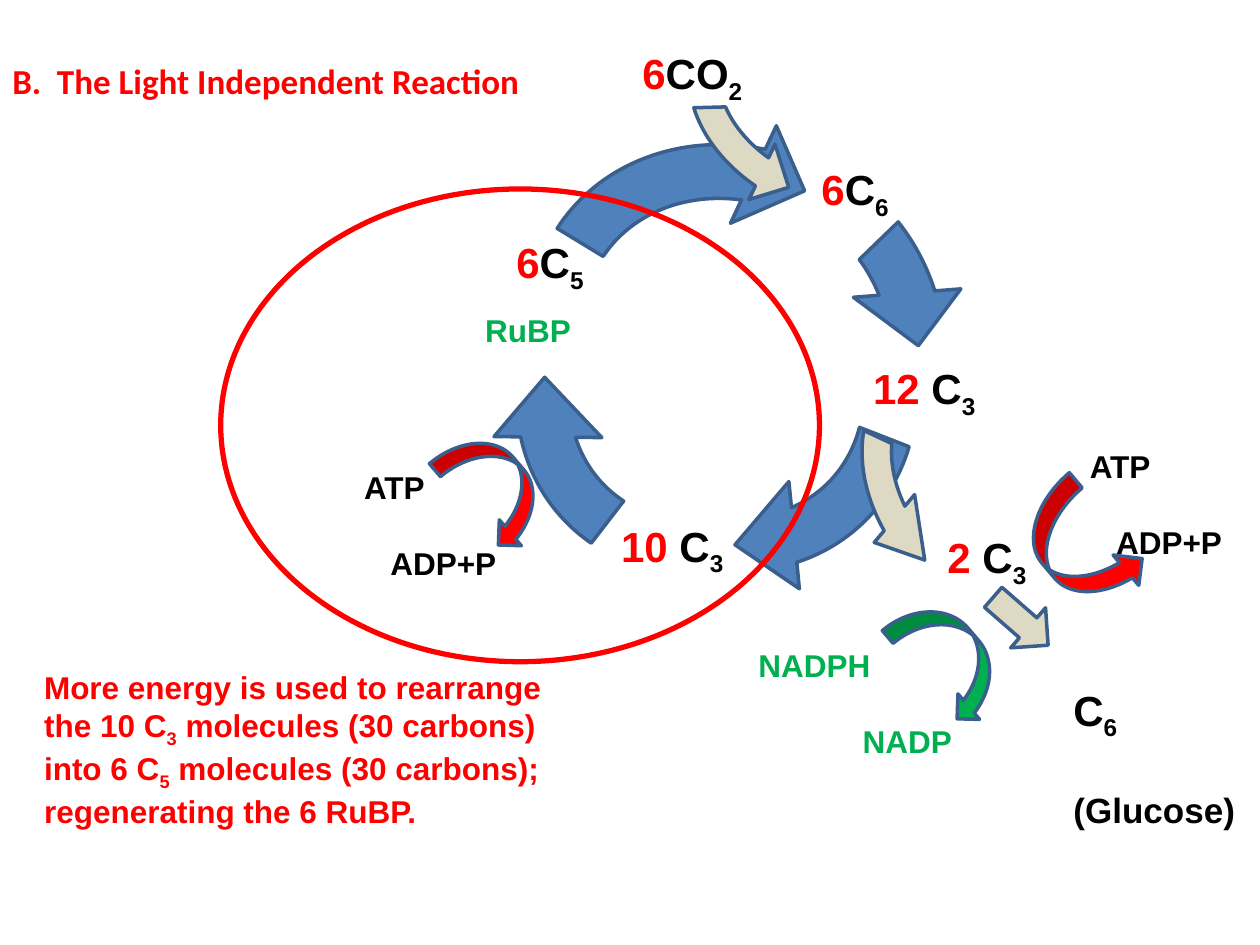
import pptx
import pptx.dml.color
import pptx.enum.shapes
import pptx.util

Cm = pptx.util.Cm
Kind = pptx.enum.shapes.MSO_SHAPE

THEME = {
    "red": "FF0000", "black": "000000", "green": "00B050",
    "blue": "4F81BD", "beige": "DDD9C3", "outline": "3A5F8C",
    "font": "Arial", "title_font": "Calibri",
    "formula": 24, "title": 20, "glucose": 20, "body": 18,
    "arrow_line": 2, "ring_line": 3,
}
SLIDE_W, SLIDE_H = 25.4, 19.05
LABEL_W = 4

TITLE = [("B.\tThe Light Independent Reaction", "red", False)]
ENERGY_NOTE = [
    ("More energy is used to rearrange the 10 C", "red", False),
    ("3", "red", True),
    (" molecules (30 carbons) into 6 C", "red", False),
    ("5", "red", True),
    (" molecules (30 carbons); regenerating the 6 RuBP.", "red", False),
]

# count, molecule, subscript, left, top
FORMULAS = [
    ("6", "CO", "2", 12.7, 0.84),
    ("6", "C", "6", 16.31, 3.18),
    ("12", " C", "3", 17.35, 7.19),
    ("2", " C", "3", 18.85, 10.59),
    ("", "C", "6", 21.39, 13.67),
    ("10", " C", "3", 12.27, 10.36),
    ("6", "C", "5", 10.16, 4.65),
]
# carrier, spent carrier, colour, left, top, shift of the spent carrier
CARRIERS = [
    ("ATP", "ADP+P", "black", 7.09, 9.32, 0.53),
    ("ATP", "ADP+P", "black", 21.72, 8.89, 0.53),
    ("NADPH", "NADP", "green", 15.04, 12.9, 2.1),
]
CARRIER_DROP = 1.53
# text, colour, size, left, top
NAMES = [
    ("RuBP", "green", "body", 9.53, 6.15),
    ("(Glucose)", "black", "glucose", 21.39, 15.77),
]

# left, top, rotation, adjustments
CYCLE_SIZE = (8.69, 9.53)
CYCLE_ARROWS = [
    (10.92, 2.46, 355.5, (0.125, 11.423, 204.577, 192.255, 0.125)),
    (10.13, 2.74, 135.6, (0.123, 11.663, 173.624, 147.42, 0.125)),
    (10.49, 2.03, 295.2, (0.125, 11.423, 204.577, 165.667, 0.125)),
    (10.13, 2.87, 231.7, (0.123, 11.663, 173.624, 153.572, 0.125)),
]
# kind, box, fill, rotation, mirrored, adjustments
SIDE_ARROWS = [
    (Kind.CIRCULAR_ARROW, (14.22, -1.12, 4.93, 6.45), "beige", 295.2, True,
     (0.125, 11.423, 204.577, 177.986, 0.125)),
    (Kind.CIRCULAR_ARROW, (17.35, 6.58, 5.05, 6.5), "beige", 321.7, True,
     (0.119, 18.727, 204.204, 177.986, 0.125)),
    (Kind.RIGHT_ARROW, (19.84, 11.99, 1.47, 1.07), "beige", 41.1, False, ()),
    (Kind.CURVED_RIGHT_ARROW, (21.01, 9.73, 1.6, 2.67), "red", 319.7, False, ()),
    (Kind.CURVED_RIGHT_ARROW, (18.49, 11.96, 1.35, 2.67), "green", 319.7, True, ()),
    (Kind.CURVED_RIGHT_ARROW, (9.3, 8.61, 1.37, 2.49), "red", 319.7, True, ()),
]
RING = (4.45, 3.81, 12.07, 9.53)


def rgb(colour):
    return pptx.dml.color.RGBColor.from_string(THEME[colour])


def add_outlined(slide, kind, box, line_colour, line_width):
    shape = slide.shapes.add_shape(kind, *map(Cm, box))
    shape.shadow.inherit = False
    shape.fill.background()
    shape.line.color.rgb = rgb(line_colour)
    shape.line.width = pptx.util.Pt(THEME[line_width])
    return shape


def add_arrow(slide, kind, box, fill, rotation, mirrored, adjustments):
    arrow = add_outlined(slide, kind, box, "outline", "arrow_line")
    arrow.fill.solid()
    arrow.fill.fore_color.rgb = rgb(fill)
    arrow.rotation = rotation
    if mirrored:
        arrow._element.spPr.xfrm.set("flipH", "1")
    for index, value in enumerate(adjustments):
        arrow.adjustments[index] = value


def add_text(slide, box, runs, size, font="font"):
    """Add one paragraph; each run is (text, colour, is_subscript)."""
    frame = slide.shapes.add_textbox(*map(Cm, box)).text_frame
    frame.word_wrap = True
    paragraph = frame.paragraphs[0]
    for text, colour, is_subscript in runs:
        run = paragraph.add_run()
        run.text = text
        run.font.name = THEME[font]
        run.font.size = pptx.util.Pt(THEME[size])
        run.font.bold = True
        run.font.color.rgb = rgb(colour)
        if is_subscript:
            run.font._element.set("baseline", "-25000")
    return paragraph


def add_label(slide, left, top, runs, size):
    width = min(LABEL_W, SLIDE_W - left)
    add_text(slide, (left, top, width, 1.2), runs, size)


def main():
    deck = pptx.Presentation()
    deck.slide_width, deck.slide_height = Cm(SLIDE_W), Cm(SLIDE_H)
    slide = deck.slides.add_slide(deck.slide_layouts[6])

    title = add_text(slide, (0, 1.07, 22.23, 1.88), TITLE, "title", "title_font")
    hanging = Cm(0.9)
    title._p.get_or_add_pPr().set("marL", str(hanging))
    title._p.get_or_add_pPr().set("indent", str(-hanging))

    for left, top, rotation, adjustments in CYCLE_ARROWS:
        add_arrow(slide, Kind.CIRCULAR_ARROW, (left, top, *CYCLE_SIZE),
                  "blue", rotation, False, adjustments)
    for side_arrow in SIDE_ARROWS:
        add_arrow(slide, *side_arrow)

    add_text(slide, (0.64, 13.34, 11.23, 3.33), ENERGY_NOTE, "body")
    for count, molecule, subscript, left, top in FORMULAS:
        runs = [(count, "red", False)] if count else []
        runs += [(molecule, "black", False), (subscript, "black", True)]
        add_label(slide, left, top, runs, "formula")
    for carrier, spent, colour, left, top, shift in CARRIERS:
        add_label(slide, left, top, [(carrier, colour, False)], "body")
        add_label(slide, left + shift, top + CARRIER_DROP,
                  [(spent, colour, False)], "body")
    for name, colour, size, left, top in NAMES:
        add_label(slide, left, top, [(name, colour, False)], size)

    add_outlined(slide, Kind.OVAL, RING, "red", "ring_line")
    deck.save("out.pptx")


if __name__ == "__main__":
    main()
